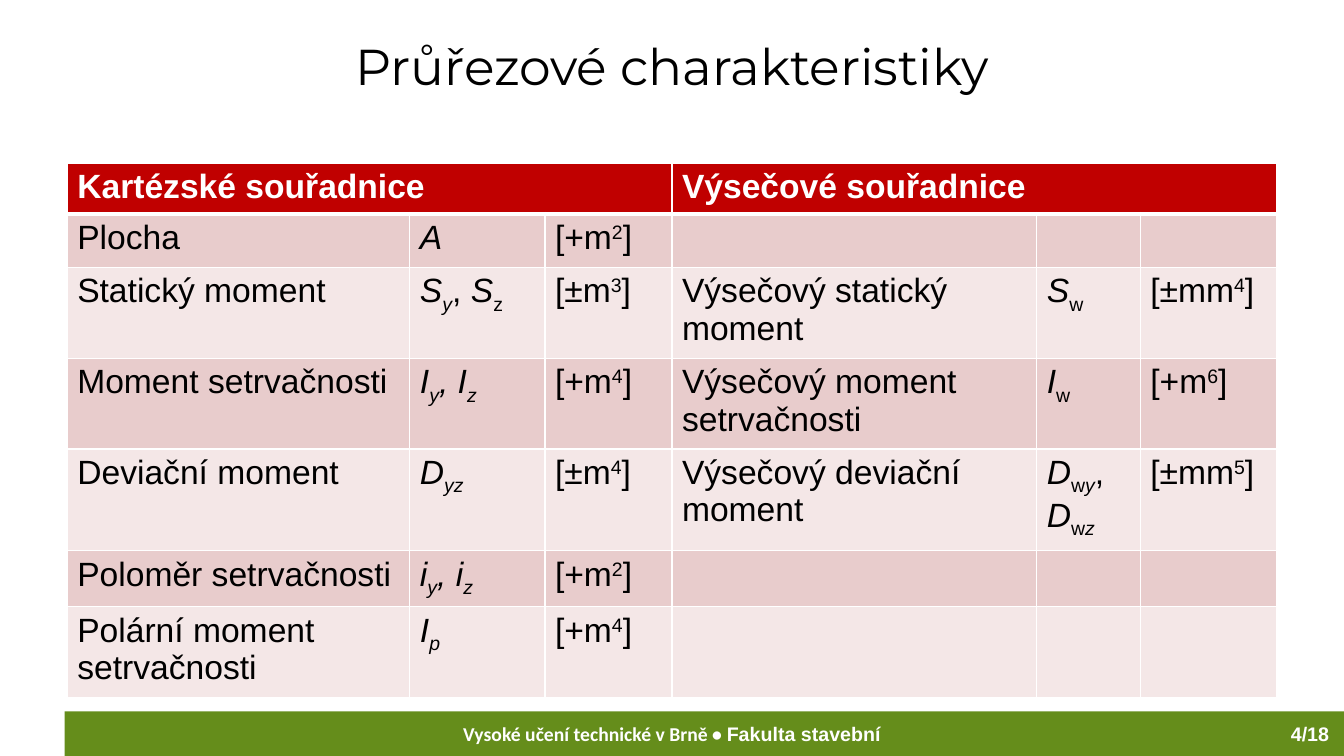
from dataclasses import dataclass
from itertools import groupby

from lxml.etree import SubElement
from pptx import Presentation
from pptx.dml.color import RGBColor as RGB
from pptx.enum.shapes import MSO_SHAPE as SHAPE
from pptx.enum.text import MSO_ANCHOR as ANCHOR, MSO_AUTO_SIZE as AUTO, PP_ALIGN as ALIGN
from pptx.oxml.ns import qn
from pptx.util import Inches, Pt


@dataclass(frozen=True)
class Theme:
    text: str = "000000"
    light: str = "FFFFFF"
    bar: str = "658D1B"
    header: str = "C00000"
    bands: tuple = ("E8CCCC", "F4E7E7")
    title_font: str = "Montserrat"
    body_font: str = "Arial"
    school_font: str = "Calibri"
    title_size: int = 36
    body_size: int = 24
    footer_size: int = 14


# Column widths and row heights in percent of the slide
COLUMNS = [25.5, 10.05, 9.45, 27.15, 7.7, 10.15]
ROWS = [6.2, 7.1, 11.25, 11.25, 12.7, 6.95, 11.25]

# Markup: * switches italic, _ subscript and ^ superscript
HEADERS = ["Kartézské souřadnice", "Výsečové souřadnice"]
BODY = [
    ["Plocha", "*A*", "[+m^2^]", "", "", ""],
    ["Statický moment", "*S_y_*, *S*_z_", "[±m^3^]",
     "Výsečový statický moment", "*S*_w_", "[±mm^4^]"],
    ["Moment setrvačnosti", "*I_y_, I_z_*", "[+m^4^]",
     "Výsečový moment setrvačnosti", "*I*_w_", "[+m^6^]"],
    ["Deviační moment", "*D_yz_*", "[±m^4^]",
     "Výsečový deviační moment", "*D*_w*y*_, *D*_w*z*_", "[±mm^5^]"],
    ["Poloměr setrvačnosti", "*i_y_, i_z_*", "[+m^2^]", "", "", ""],
    ["Polární moment setrvačnosti", "*I_p_*", "[+m^4^]", "", "", ""],
]


def parse_markup(text):
    """Yield (text, set of active marks) for each run."""
    marks, chars = frozenset(), []
    for ch in text:
        if ch in "*_^":
            marks = marks ^ {ch}
        else:
            chars.append((ch, marks))
    for marks, group in groupby(chars, key=lambda pair: pair[1]):
        yield "".join(ch for ch, _ in group), marks


class SlideBuilder:
    def __init__(self, prs, theme):
        self.prs, self.theme = prs, theme
        self.s = prs.slides.add_slide(prs.slide_layouts[5])

    def x(self, percent):
        return round(self.prs.slide_width * percent / 100)

    def y(self, percent):
        return round(self.prs.slide_height * percent / 100)

    def box(self, left, top, width, height):
        return self.x(left), self.y(top), self.x(width), self.y(height)

    def style(self, p, size, color, font=None, bold=False):
        p.font.size, p.font.bold = Pt(size), bold
        p.font.color.rgb = RGB.from_string(color)
        if font:
            p.font.name = font

    def title(self, text, *area):
        sp = self.s.shapes.title
        sp.left, sp.top, sp.width, sp.height = self.box(*area)
        tf = sp.text_frame
        tf.text, tf.word_wrap = text, True
        tf.auto_size, tf.vertical_anchor = AUTO.NONE, ANCHOR.TOP
        p = tf.paragraphs[0]
        p.alignment = ALIGN.CENTER
        self.style(p, self.theme.title_size, self.theme.text, self.theme.title_font)

    def bar(self, *area):
        sp = self.s.shapes.add_shape(SHAPE.RECTANGLE, *self.box(*area))
        sp.shadow.inherit = False
        sp.fill.solid()
        sp.fill.fore_color.rgb = RGB.from_string(self.theme.bar)
        sp.line.fill.background()

    def footer(self, runs, align, *area):
        tf = self.s.shapes.add_textbox(*self.box(*area)).text_frame
        tf.word_wrap = True
        p = tf.paragraphs[0]
        p.alignment = align
        self.style(p, self.theme.footer_size, self.theme.light, bold=True)
        for text, font in runs:
            r = p.add_run()
            r.text, r.font.name = text, font

    def cell(self, cell, text, fill, color, bold=False, top=1, bottom=1):
        cell.fill.solid()
        cell.fill.fore_color.rgb = RGB.from_string(fill)
        # Borders come before the fill in the cell properties
        tc_pr = cell._tc.get_or_add_tcPr()
        sides = {"L": 1, "R": 1, "T": top, "B": bottom}
        for i, (side, width) in enumerate(sides.items()):
            ln = SubElement(tc_pr, qn(f"a:ln{side}"), w=str(Pt(width)))
            solid = SubElement(ln, qn("a:solidFill"))
            SubElement(solid, qn("a:srgbClr"), val=self.theme.light)
            tc_pr.insert(i, ln)
        if not text:
            return
        p = cell.text_frame.paragraphs[0]
        self.style(p, self.theme.body_size, color, self.theme.body_font, bold)
        for part, marks in parse_markup(text):
            r = p.add_run()
            r.text = part
            r.font.italic = "*" in marks
            if "_" in marks:
                r.font._element.set("baseline", "-25000")
            elif "^" in marks:
                r.font._element.set("baseline", "30000")

    def table(self, headers, body, left, top):
        area = self.box(left, top, sum(COLUMNS), sum(ROWS))
        table = self.s.shapes.add_table(len(ROWS), len(COLUMNS), *area).table
        table.horz_banding = False
        for column, width in zip(table.columns, COLUMNS):
            column.width = self.x(width)
        for row, height in zip(table.rows, ROWS):
            row.height = self.y(height)
        # Header cells each span one half of the columns
        span = len(COLUMNS) // len(headers)
        for i, text in enumerate(headers):
            first = table.cell(0, i * span)
            first.merge(table.cell(0, (i + 1) * span - 1))
            for j in range(span):
                self.cell(table.cell(0, i * span + j), text if j == 0 else "",
                          self.theme.header, self.theme.light, bold=True, bottom=3)
        # Banded body rows
        for i, row in enumerate(body):
            for j, text in enumerate(row):
                self.cell(table.cell(i + 1, j), text, self.theme.bands[i % 2],
                          self.theme.text, top=1 if i else 3)


def main():
    prs = Presentation()
    prs.slide_width, prs.slide_height = Inches(13.33), Inches(7.5)
    theme = Theme()
    slide = SlideBuilder(prs, theme)

    # Footer band
    slide.bar(4.8, 94.1, 95.2, 5.9)
    slide.footer([("Vysoké učení technické v Brně • ", theme.school_font),
                  ("Fakulta stavební", theme.body_font)],
                 ALIGN.CENTER, 0, 94.8, 100, 4.5)
    slide.footer([("4/18", theme.body_font)], ALIGN.RIGHT, 89.8, 94.8, 9.83, 4.5)

    # Title and table
    slide.title("Průřezové charakteristiky", 5, 4, 90, 14.5)
    slide.table(HEADERS, BODY, 5, 21.6)
    prs.save("out.pptx")


if __name__ == "__main__":
    main()
